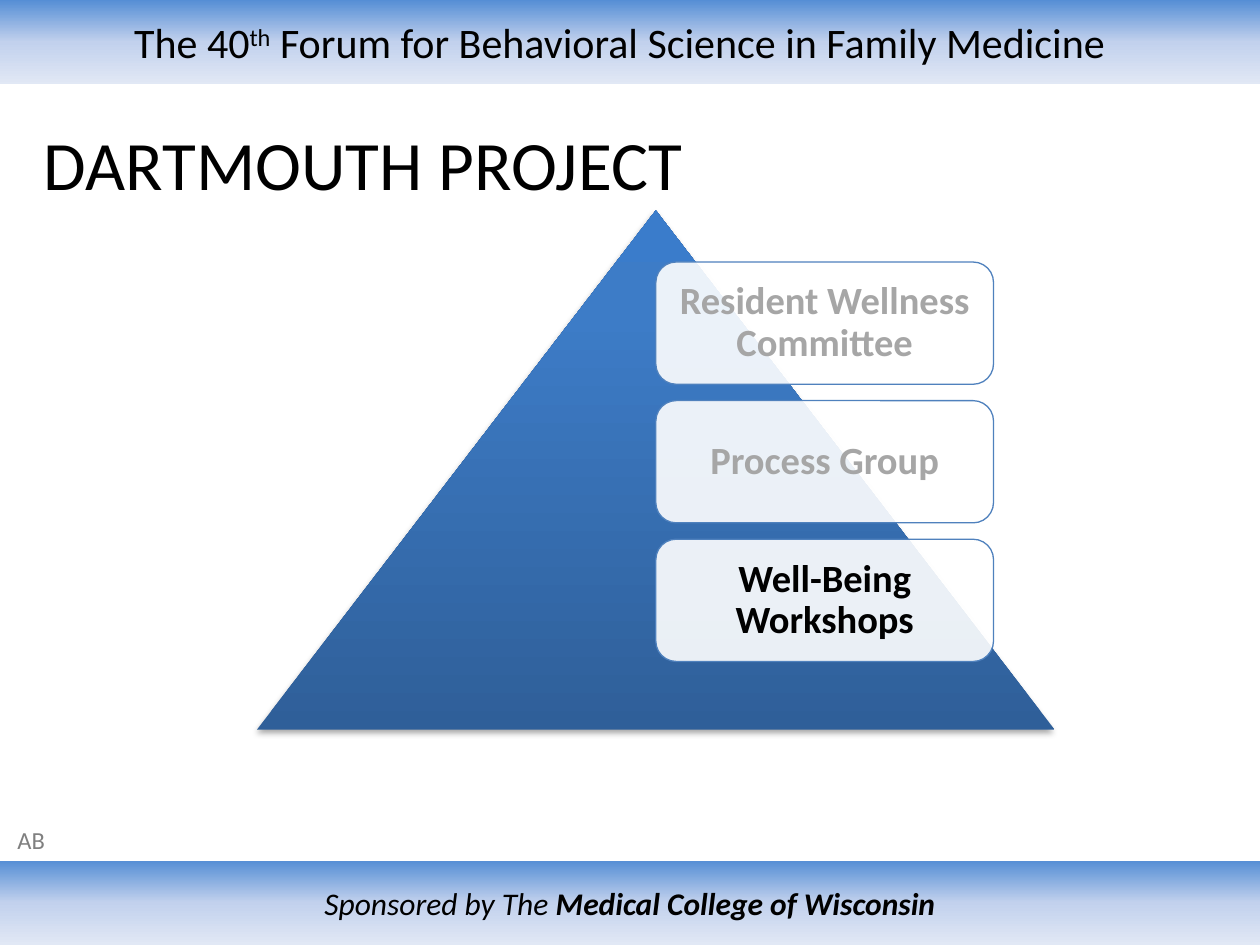
from dataclasses import dataclass

from lxml import etree
from pptx import Presentation
from pptx.dml.color import RGBColor
from pptx.enum.shapes import MSO_SHAPE
from pptx.enum.text import MSO_ANCHOR, PP_ALIGN
from pptx.oxml.ns import qn
from pptx.util import Inches, Pt

RECTANGLE = MSO_SHAPE.RECTANGLE
TRIANGLE = MSO_SHAPE.ISOSCELES_TRIANGLE
ROUNDED = MSO_SHAPE.ROUNDED_RECTANGLE
MIDDLE, TOP = MSO_ANCHOR.MIDDLE, MSO_ANCHOR.TOP
CENTER, LEFT = PP_ALIGN.CENTER, PP_ALIGN.LEFT

SLIDE_W, SLIDE_H = 10, 7.5
BAND_H = 0.67
DOWN, UP = 270, 90  # gradient directions, counter-clockwise degrees


@dataclass(frozen=True)
class Theme:
    font: str = "Calibri"
    ink: str = "000000"
    faded: str = "A6A6A6"
    initials: str = "808080"
    card: str = "FFFFFF"
    card_line: str = "4F81BD"
    band: tuple = ((0, "558ED5"), (50, "C2D1ED"), (100, "E1E8F5"))
    pyramid: tuple = ((0, "2F5F99"), (80, "3D7CC7"), (100, "3A7CCB"))
    title_size: float = 39.6
    header_size: float = 24
    card_size: float = 22
    footer_size: float = 18
    initials_size: float = 14


THEME = Theme()


def add_color(parent, color, alpha=None):
    node = etree.SubElement(parent, qn("a:srgbClr"), val=color)
    if alpha is not None:
        etree.SubElement(node, qn("a:alpha"), val=str(alpha * 1000))


def add_panel(slide, preset, box):
    panel = slide.shapes.add_shape(preset, *map(Inches, box))
    panel.shadow.inherit = False
    panel.line.fill.background()
    return panel


def fill_gradient(panel, stops, direction):
    panel.fill.gradient()
    panel.fill.gradient_angle = direction
    stop_list = panel._element.spPr.find(".//" + qn("a:gsLst"))
    stop_list.clear()
    for position, color in stops:
        stop = etree.SubElement(stop_list, qn("a:gs"), pos=str(position * 1000))
        add_color(stop, color)


def write_text(holder, runs, size, color, align=CENTER, anchor=MIDDLE):
    """Fill the holder with one paragraph made of the given runs."""
    frame = holder.text_frame
    frame.word_wrap = True
    frame.vertical_anchor = anchor
    paragraph = frame.paragraphs[0]
    paragraph.alignment = align
    font = paragraph.font
    font.name, font.size = THEME.font, Pt(size)
    font.color.rgb = RGBColor.from_string(color)
    for words in runs:
        paragraph.add_run().text = words
    return paragraph


def add_band(slide, top, runs, size):
    band = add_panel(slide, RECTANGLE, (0, top, SLIDE_W, BAND_H))
    fill_gradient(band, THEME.band, DOWN)
    return band, write_text(band, runs, size, THEME.ink)


def add_label(slide, box, words, size, color, anchor):
    label = slide.shapes.add_textbox(*map(Inches, box))
    write_text(label, [words], size, color, LEFT, anchor)


def add_pyramid(slide, box):
    pyramid = add_panel(slide, TRIANGLE, box)
    fill_gradient(pyramid, THEME.pyramid, UP)
    effects = pyramid._element.spPr.find(qn("a:effectLst"))
    shadow = etree.SubElement(
        effects, qn("a:outerShdw"), blurRad=str(Pt(3.1)), dist=str(Pt(1.8)),
        dir="5400000", rotWithShape="0")
    add_color(shadow, THEME.ink, 35)


def add_card(slide, box, words, color):
    card = add_panel(slide, ROUNDED, box)
    card.fill.solid()
    card.fill.fore_color.rgb = RGBColor.from_string(THEME.card)
    fill_color = card._element.spPr.find(qn("a:solidFill")).find(qn("a:srgbClr"))
    etree.SubElement(fill_color, qn("a:alpha"), val="90000")
    card.line.color.rgb = RGBColor.from_string(THEME.card_line)
    card.line.width = Pt(0.75)
    frame = card.text_frame
    frame.margin_left = frame.margin_right = Inches(0.09)
    frame.margin_top = frame.margin_bottom = Inches(0.09)
    paragraph = write_text(card, [words], THEME.card_size, color)
    paragraph.line_spacing = 0.9
    paragraph.font.bold = True


def main():
    deck = Presentation()
    deck.slide_width, deck.slide_height = Inches(SLIDE_W), Inches(SLIDE_H)
    slide = deck.slides.add_slide(deck.slide_layouts[6])

    # Header band, its text set slightly left of centre
    header, forum = add_band(
        slide, 0,
        ["The 40", "th", " Forum for Behavioral Science in Family Medicine"],
        THEME.header_size)
    header.text_frame.margin_right = Inches(0.26)
    forum.runs[1]._r.get_or_add_rPr().set("baseline", "30000")

    # Footer band
    _, sponsor = add_band(
        slide, SLIDE_H - BAND_H,
        ["Sponsored by The ", "Medical College of Wisconsin"],
        THEME.footer_size)
    sponsor.font.italic = True
    sponsor.runs[1].font.bold = True

    # Pyramid with its three levels
    pyramid_left, pyramid_top, pyramid_w, pyramid_h = 2.04, 1.67, 6.33, 4.12
    add_pyramid(slide, (pyramid_left, pyramid_top, pyramid_w, pyramid_h))
    card_left = pyramid_left + pyramid_w / 2
    card_top, card_w, card_h, card_step = 2.08, 2.68, 0.97, 1.1
    levels = [
        ("Resident Wellness Committee", THEME.faded),
        ("Process Group", THEME.faded),
        ("Well-Being Workshops", THEME.ink),
    ]
    for row, (words, color) in enumerate(levels):
        box = (card_left, card_top + row * card_step, card_w, card_h)
        add_card(slide, box, words, color)

    # Title and presenter's initials
    add_label(slide, (0.25, 0.92, 9, 0.75), "DARTMOUTH PROJECT",
              THEME.title_size, THEME.ink, MIDDLE)
    add_label(slide, (0.04, 6.5, 0.54, 0.34), "AB",
              THEME.initials_size, THEME.initials, TOP)

    deck.save("out.pptx")


if __name__ == "__main__":
    main()
